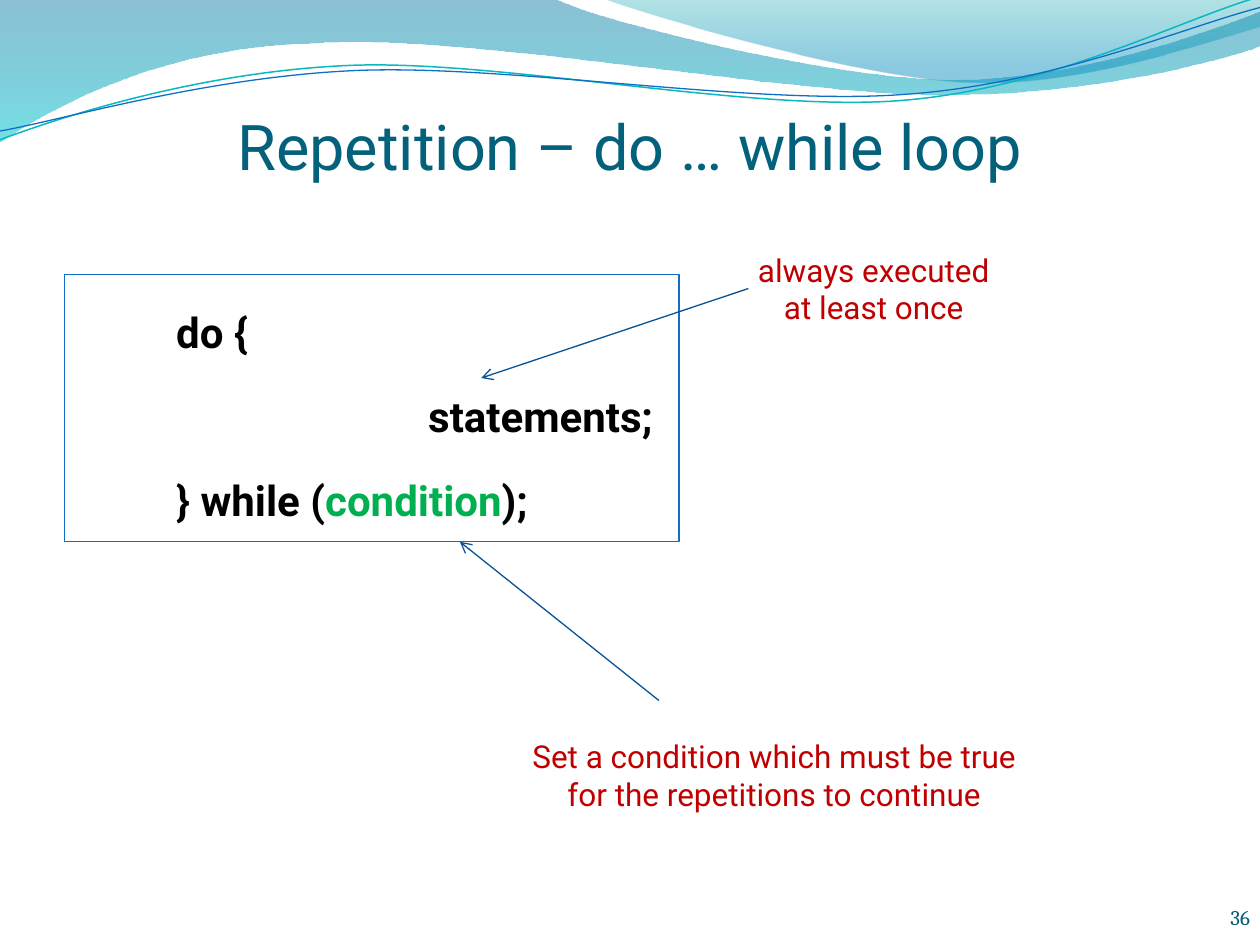
from dataclasses import dataclass

from lxml import etree
from pptx import Presentation
from pptx import util as u
from pptx.dml.color import RGBColor
from pptx.enum import shapes, text
from pptx.oxml.ns import qn


@dataclass(frozen=True)
class Theme:
    font: str = "Roboto"
    number_font: str = "Cambria"
    title: str = "04617B"
    code: str = "000000"
    condition: str = "00B050"
    note: str = "C00000"
    number: str = "045D75"
    border: str = "0F6FC6"
    wave_line: str = "0AB8BF"
    arrow: str = "095295"
    title_size: int = 36
    code_size: int = 24
    note_size: int = 18
    number_size: int = 12
    line_width: float = 0.75


THEME = Theme()

BANDS = [
    (
        [[(0, 0)], [(4.4, -0.01)],
         [(4.76, 0.17), (6.64, 0.63), (7.58, 0.63)],
         [(8.53, 0.63), (9.58, 0.26), (10, 0.09)],
         [(10.01, 0.36)],
         [(9.83, 0.44), (8.7, 0.76), (7.46, 0.75)],
         [(6.22, 0.75), (3.82, 0.28), (2.57, 0.34)],
         [(1.29, 0.36), (0.46, 0.83), (-0.01, 1.13)]],
        [(0, "0074A1", 45), (1, "00C6CF", 55)],
    ),
    (
        [[(4.79, -0.01)],
         [(5.09, 0.11), (6.82, 0.62), (7.69, 0.65)],
         [(8.56, 0.69), (9.61, 0.32), (10, 0.21)],
         [(10, 0)]],
        [(0, "00A1A9", 30), (0.8, "008BBF", 45)],
    ),
]
STRANDS = [
    (
        [[(0, 1.11)],
         [(0.48, 0.93), (1.58, 0.57), (2.77, 0.52)],
         [(3.95, 0.47), (5.93, 0.89), (7.13, 0.8)],
         [(8.33, 0.71), (9.38, 0.15), (9.98, -0.02)]],
        THEME.wave_line, 0.85,
    ),
    (
        [[(0, 1.04)],
         [(0.47, 0.96), (1.64, 0.61), (2.83, 0.56)],
         [(4.03, 0.51), (5.97, 0.84), (7.17, 0.75)],
         [(8.36, 0.67), (9.41, 0.21), (10, 0.06)]],
        THEME.border, THEME.line_width,
    ),
]


def color(value):
    return RGBColor.from_string(value)


def apply(target, values):
    for name, value in values.items():
        setattr(target, name, value)


def inches(box):
    return [u.Inches(value) for value in box]


def place(shape, box):
    apply(shape, dict(zip(("left", "top", "width", "height"), inches(box))))


def write(paragraph, words, size, ink, font=THEME.font, bold=False):
    run = paragraph.add_run()
    run.text = words
    apply(run.font, {"name": font, "size": u.Pt(size), "bold": bold})
    run.font.color.rgb = color(ink)


def set_line(line, ink, width=THEME.line_width):
    line.color.rgb = color(ink)
    line.width = u.Pt(width)


def add_outline(slide, segments, close):
    anchors = [inches(segment[-1]) for segment in segments]
    builder = slide.shapes.build_freeform(*anchors[0])
    builder.add_line_segments(anchors[1:], close=close)
    shape = builder.convert_to_shape()
    shape.shadow.inherit = False
    for element, segment in zip(list(shape.element.iter(qn("a:lnTo"))), segments[1:]):
        if len(segment) == 3:
            element.tag = qn("a:cubicBezTo")
            for index, control in enumerate(segment[:-1]):
                x, y = inches(control)
                point = etree.Element(qn("a:pt"), x=str(x - shape.left), y=str(y - shape.top))
                element.insert(index, point)
    return shape


def add_waves(slide):
    for segments, stops in BANDS:
        band = add_outline(slide, segments, True)
        band.line.fill.background()
        band.fill.gradient()
        band.fill.gradient_angle = 270
        for stop, (position, ink, _) in zip(band.fill.gradient_stops, stops):
            stop.position = position
            stop.color.rgb = color(ink)
        for element, (_, _, opacity) in zip(band.element.iter(qn("a:srgbClr")), stops):
            etree.SubElement(element, qn("a:alpha"), val=str(opacity * 1000))
    for segments, ink, width in STRANDS:
        strand = add_outline(slide, segments, False)
        strand.fill.background()
        set_line(strand.line, ink, width)


def add_title(slide, box, words):
    title = slide.shapes.title
    place(title, box)
    apply(title.text_frame, {
        "vertical_anchor": text.MSO_ANCHOR.BOTTOM, "margin_left": 0, "margin_right": 0,
        "margin_top": u.Inches(0.05), "margin_bottom": 0,
    })
    paragraph = title.text_frame.paragraphs[0]
    paragraph.alignment = text.PP_ALIGN.CENTER
    write(paragraph, words, THEME.title_size, THEME.title)
    slide.shapes.element.append(title.element)


def add_code(slide, box, lines):
    panel = slide.shapes.add_shape(shapes.MSO_SHAPE.RECTANGLE, *inches(box))
    panel.shadow.inherit = False
    panel.fill.background()
    set_line(panel.line, THEME.border)
    frame = panel.text_frame
    apply(frame, {"word_wrap": True, "vertical_anchor": text.MSO_ANCHOR.TOP})
    for index, (indent, runs) in enumerate(lines):
        paragraph = frame.add_paragraph() if index else frame.paragraphs[0]
        apply(paragraph, {
            "alignment": text.PP_ALIGN.LEFT, "line_spacing": 1.5, "space_before": u.Pt(4.8),
        })
        paragraph._p.get_or_add_pPr().set("marL", str(u.Inches(indent)))
        for words, ink in runs:
            write(paragraph, words, THEME.code_size, ink, bold=True)


def add_note(slide, box, words, arrow_start, arrow_end):
    note = slide.shapes.add_textbox(*inches(box))
    apply(note.text_frame, {
        "word_wrap": True, "auto_size": text.MSO_AUTO_SIZE.SHAPE_TO_FIT_TEXT,
    })
    paragraph = note.text_frame.paragraphs[0]
    paragraph.alignment = text.PP_ALIGN.CENTER
    write(paragraph, words, THEME.note_size, THEME.note)
    arrow = slide.shapes.add_connector(
        shapes.MSO_CONNECTOR.STRAIGHT, *inches(arrow_start + arrow_end))
    set_line(arrow.line, THEME.arrow)
    etree.SubElement(arrow.line._get_or_add_ln(), qn("a:tailEnd"), type="arrow")
    etree.SubElement(arrow.element.spPr, qn("a:effectLst"))


def add_number(slide, box, words):
    number = slide.shapes.add_textbox(*inches(box))
    apply(number.text_frame, {
        "word_wrap": True, "vertical_anchor": text.MSO_ANCHOR.BOTTOM,
        "margin_left": 0, "margin_right": 0, "margin_top": 0, "margin_bottom": 0,
    })
    paragraph = number.text_frame.paragraphs[0]
    paragraph.alignment = text.PP_ALIGN.RIGHT
    write(paragraph, words, THEME.number_size, THEME.number, THEME.number_font)


def main():
    presentation = Presentation()
    apply(presentation, {"slide_width": u.Inches(10), "slide_height": u.Inches(7.5)})
    slide = presentation.slides.add_slide(presentation.slide_layouts[5])
    add_waves(slide)
    add_title(slide, (0.5, 0.6, 9, 0.85), "Repetition – do … while loop")
    add_code(slide, (0.51, 2.18, 4.88, 2.12), [
        (0.79, [("do {", THEME.code)]),
        (2.79, [("statements;", THEME.code)]),
        (0.79, [("} while (", THEME.code), ("condition", THEME.condition), (");", THEME.code)]),
    ])
    add_number(slide, (9.09, 6.98, 0.83, 0.4), "36")
    add_note(slide, (3.98, 5.8, 4.33, 0.71),
             "Set a condition which must be true for the repetitions to continue",
             (5.23, 5.56), (3.65, 4.3))
    add_note(slide, (5.87, 1.94, 2.13, 0.71), "always executed at least once",
             (5.94, 2.29), (3.82, 3))
    presentation.save("out.pptx")


if __name__ == "__main__":
    main()
